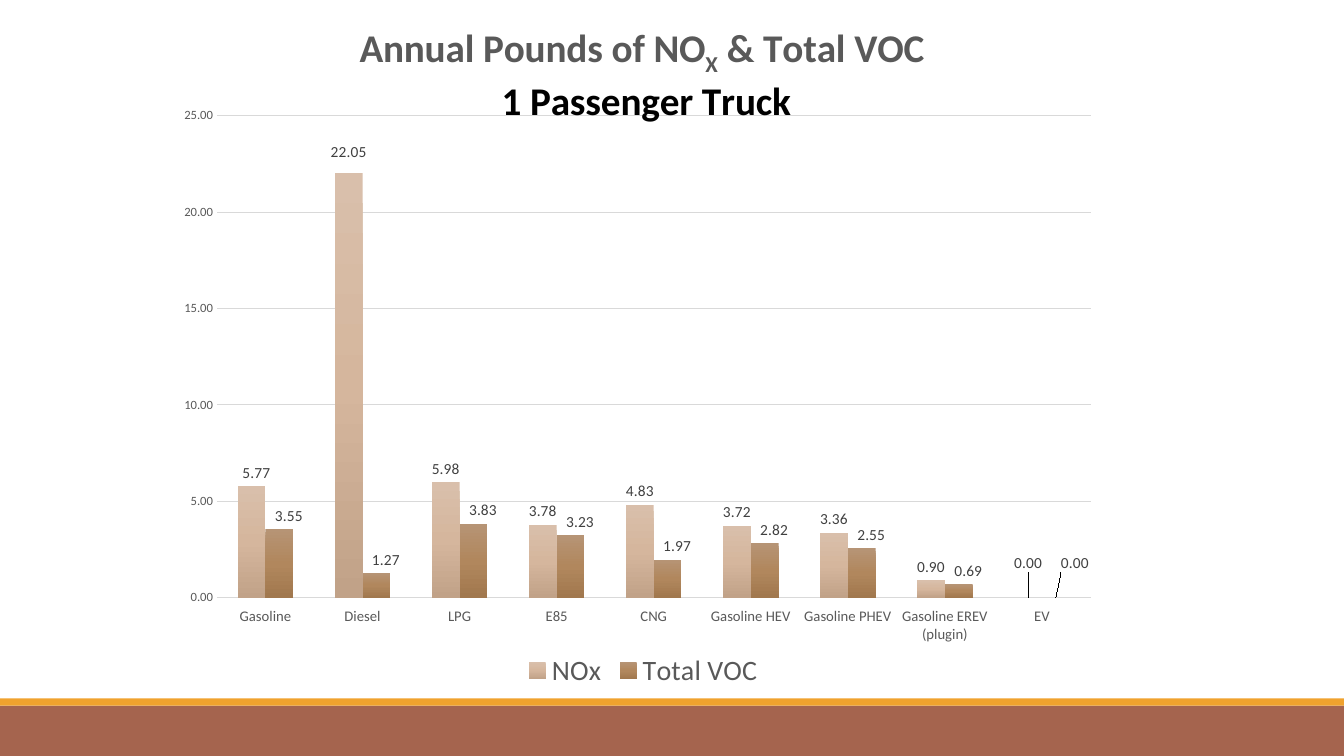
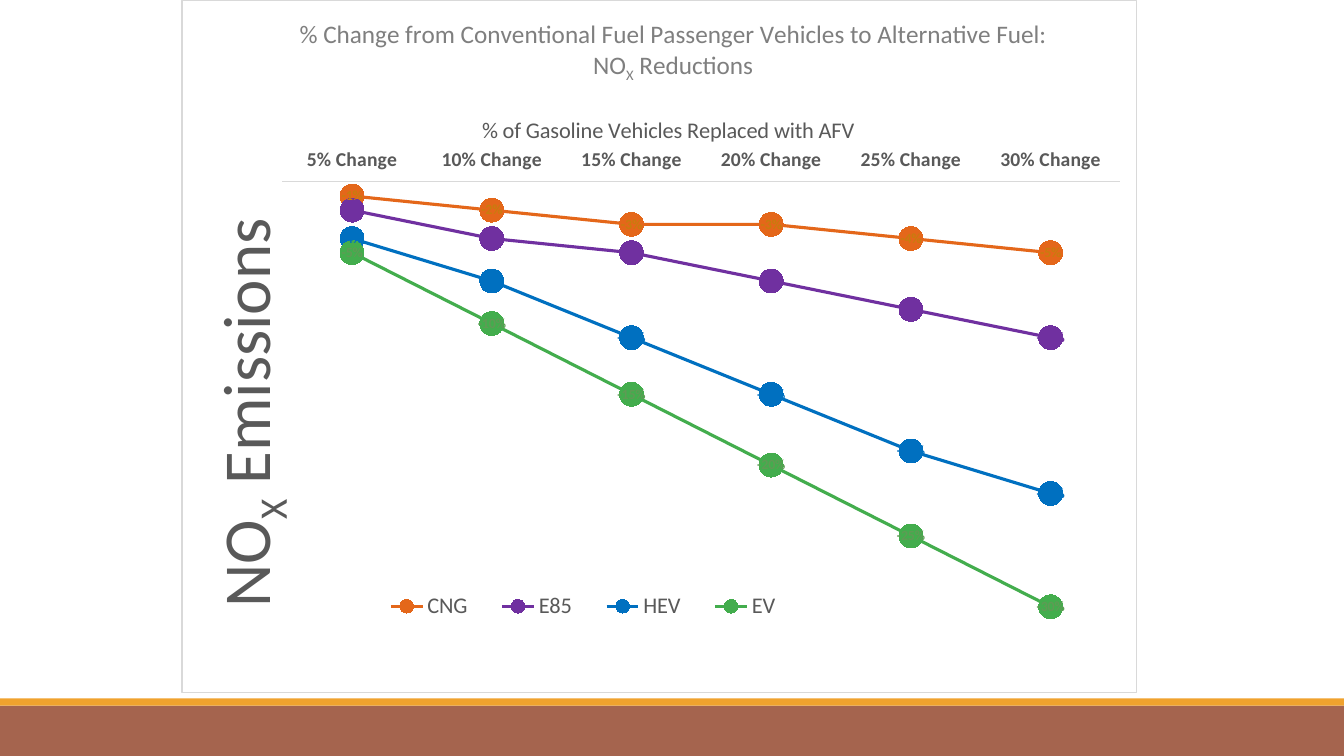
from pptx import Presentation
from pptx.chart.data import CategoryChartData
from pptx.dml.color import RGBColor
from pptx.enum.chart import (XL_CHART_TYPE, XL_LABEL_POSITION, XL_LEGEND_POSITION,
                             XL_MARKER_STYLE, XL_TICK_LABEL_POSITION, XL_TICK_MARK)
from pptx.enum.shapes import MSO_SHAPE
from pptx.enum.text import PP_ALIGN
from pptx.oxml import parse_xml
from pptx.oxml.ns import nsdecls
from pptx.util import Inches, Pt

COLUMNS = XL_CHART_TYPE.COLUMN_CLUSTERED
LINES = XL_CHART_TYPE.LINE_MARKERS
OUTSIDE = XL_LABEL_POSITION.OUTSIDE_END
CENTER = XL_LABEL_POSITION.CENTER
LEGEND_BOTTOM = XL_LEGEND_POSITION.BOTTOM
LEGEND_TOP = XL_LEGEND_POSITION.TOP
NO_TICK = XL_TICK_MARK.NONE
LABELS_LOW = XL_TICK_LABEL_POSITION.LOW
LABELS_HIGH = XL_TICK_LABEL_POSITION.HIGH
CIRCLE = XL_MARKER_STYLE.CIRCLE

WIDTH, HEIGHT = Inches(13.33), Inches(7.5)
CHART_WIDTH, CHART_HEIGHT = Inches(9.48), Inches(6.88)
FONT = "Calibri"
COLORS = {
    "black": "000000", "white": "FFFFFF", "text": "595959", "label": "404040",
    "title": "7F7F7F", "rule": "D9D9D9", "band": "A5644E", "stripe": "F0A22E",
}
BANDS = [("band", 7.0, 0.5), ("stripe", 6.93, 0.07)]  # colour, top, height

TRUCK_FUELS = ["Gasoline", "Diesel", "LPG", "E85", "CNG", "Gasoline HEV",
               "Gasoline PHEV", "Gasoline EREV (plugin)", "EV"]
# name, values, gradient colours, label shifts by point
TRUCK_SERIES = [
    ("NOx", [5.77, 22.05, 5.98, 3.78, 4.83, 3.72, 3.36, 0.9, 0],
     ["D9BFAB", "D5B69D", "C1A288"], {0: (0.005, 0), 1: (0, -0.01), 8: (0, -0.03)}),
    ("Total VOC", [3.55, 1.27, 3.83, 3.23, 1.97, 2.82, 2.55, 0.69, 0],
     ["B69475", "B1875D", "A1784E"],
     {**{point: (0.01, 0) for point in range(8)}, 8: (0.02, -0.03)}),
]
CHANGES = [f"{share}% Change" for share in range(5, 35, 5)]
# name, values, line colour, label colour
CHANGE_SERIES = [
    ("CNG", [-0.01, -0.02, -0.03, -0.03, -0.04, -0.05], "E4671A", "C87D0E"),
    ("E85", [-0.02, -0.04, -0.05, -0.07, -0.09, -0.11], "7030A0", "7030A0"),
    ("HEV", [-0.04, -0.07, -0.11, -0.15, -0.19, -0.22], "0070C0", "0070C0"),
    ("EV", [-0.05, -0.1, -0.15, -0.2, -0.25, -0.3], "43AD4D", "5F9B55"),
]


def rgb(color):
    return RGBColor.from_string(COLORS.get(color, color))


def style_font(font, size, color="text", bold=False):
    font.name, font.size, font.bold = FONT, Pt(size), bold
    font.color.rgb = rgb(color)


def add_text(paragraph, text, subscript=False, **style):
    run = paragraph.add_run()
    run.text = text
    style_font(run.font, **style)
    if subscript:
        run._r.get_or_add_rPr().set("baseline", "-25000")


def write_title(text_frame, lines, **style):
    """Write lines of runs; every second run of a line is a subscript."""
    for number, line in enumerate(lines):
        paragraph = text_frame.add_paragraph() if number else text_frame.paragraphs[0]
        paragraph.alignment = PP_ALIGN.CENTER
        for position, text in enumerate(line):
            add_text(paragraph, text, subscript=position % 2 == 1, **style)


def set_layout(parent, x, y, width=None, height=None, inner=False, edge=True):
    """Place a chart part by shares of the chart; without edge, shift it."""
    for old_layout in parent.xpath("c:layout"):
        parent.remove(old_layout)
    settings = [("layoutTarget", "inner")] if inner else []
    if edge:
        settings += [("xMode", "edge"), ("yMode", "edge")]
    settings += [("x", x), ("y", y)]
    if width:
        settings += [("w", width), ("h", height)]
    items = "".join(f'<c:{tag} val="{value}"/>' for tag, value in settings)
    layout = parse_xml(f'<c:layout {nsdecls("c")}><c:manualLayout>{items}'
                       '</c:manualLayout></c:layout>')
    before = parent.xpath("c:tx|c:legendPos|c:idx")
    if before:
        before[0].addnext(layout)
    else:
        parent.insert(0, layout)


def chart_part(chart, query):
    return chart.element.xpath(f"c:chart/{query}")[0]


def add_bands(layout, slide):
    """Draw the bottom bands and move them to the layout that the slides share."""
    for placeholder in list(layout.placeholders):
        layout.shapes.element.remove(placeholder.element)
    for color, top, height in BANDS:
        band = slide.shapes.add_shape(MSO_SHAPE.RECTANGLE, 0, Inches(top), WIDTH, Inches(height))
        band.shadow.inherit = False
        band.fill.solid()
        band.fill.fore_color.rgb = rgb(color)
        band.line.fill.background()
        layout.shapes.element.append(band.element)


def add_chart(slide, kind, left, categories, series_rows, number_format, plot_box):
    data = CategoryChartData(number_format=number_format)
    data.categories = categories
    for name, values, *_ in series_rows:
        data.add_series(name, values)
    chart = slide.shapes.add_chart(kind, Inches(left), 0, CHART_WIDTH, CHART_HEIGHT, data).chart
    style_font(chart.font, 10, "black")
    chart.plots[0].vary_by_categories = False
    set_layout(chart_part(chart, "c:plotArea"), *plot_box, inner=True)
    return chart


def add_legend(chart, position, size):
    chart.has_legend = True
    chart.legend.position = position
    chart.legend.include_in_layout = False
    style_font(chart.legend.font, size)


def style_category_axis(axis, label_position, size, width, bold=False):
    axis.major_tick_mark = axis.minor_tick_mark = NO_TICK
    axis.tick_label_position = label_position
    axis.format.line.color.rgb = rgb("rule")
    axis.format.line.width = Pt(width)
    style_font(axis.tick_labels.font, size, bold=bold)


def style_value_axis(axis, low, high, step):
    axis.minimum_scale, axis.maximum_scale, axis.major_unit = low, high, step
    axis.major_tick_mark = axis.minor_tick_mark = NO_TICK


def show_values(series, number_format, position, **style):
    labels = series.data_labels
    labels.show_value = True
    labels.number_format = number_format
    labels.number_format_is_linked = False
    labels.position = position
    style_font(labels.font, **style)


def fill_gradient(chart, series, number, colors):
    series.format.fill.gradient()
    series.format.fill.gradient_angle = 270
    gradient_stops = chart.element.xpath(".//c:ser")[number].xpath("c:spPr/a:gradFill/a:gsLst")[0]
    for stop in list(gradient_stops):
        gradient_stops.remove(stop)
    for position, color in enumerate(colors):
        gradient_stops.append(parse_xml(
            f'<a:gs {nsdecls("a")} pos="{position * 50000}"><a:srgbClr val="{color}"/></a:gs>'))


def shift_labels(chart, series, number, shifts, **style):
    for point, (x, y) in shifts.items():
        label = series.points[point].data_label
        style_font(label.font, **style)
        label.position = OUTSIDE
        element = chart.element.xpath(".//c:ser")[number].xpath(
            f"c:dLbls/c:dLbl[c:idx/@val='{point}']")[0]
        set_layout(element, x, y, edge=False)


def add_truck_chart(slide):
    chart = add_chart(slide, COLUMNS, 1.64, TRUCK_FUELS, TRUCK_SERIES, "0.00",
                      (0.054, 0.167, 0.914, 0.695))
    chart.plots[0].gap_width = 150
    title = chart.chart_title.text_frame
    write_title(title, [["Annual Pounds of NO", "X"]], size=28, bold=True)
    add_text(title.paragraphs[0], " & Total VOC ", size=28, bold=True)
    subtitle = title.add_paragraph()
    subtitle.alignment = PP_ALIGN.CENTER
    add_text(subtitle, "1 Passenger Truck", size=28, color="black", bold=True)
    set_layout(chart_part(chart, "c:title"), 0.2, 0.03)
    add_legend(chart, LEGEND_BOTTOM, 20)

    style_category_axis(chart.category_axis, LABELS_LOW, 10.5, 1)
    value_axis = chart.value_axis
    style_value_axis(value_axis, 0, 25, 5)
    value_axis.format.line.fill.background()
    value_axis.major_gridlines.format.line.color.rgb = rgb("rule")
    value_axis.major_gridlines.format.line.width = Pt(0.75)
    value_axis.tick_labels.number_format = "0.00"
    value_axis.tick_labels.number_format_is_linked = False
    style_font(value_axis.tick_labels.font, 9)

    label_style = {"size": 11, "color": "label"}
    for number, (series, row) in enumerate(zip(chart.plots[0].series, TRUCK_SERIES)):
        fill_gradient(chart, series, number, row[2])
        show_values(series, "0.00", OUTSIDE, **label_style)
        shift_labels(chart, series, number, row[3], **label_style)


def add_change_chart(slide):
    chart = add_chart(slide, LINES, 1.8, CHANGES, CHANGE_SERIES, "0%",
                      (0.105, 0.262, 0.878, 0.716))
    chart_part(chart, ".").addnext(parse_xml(
        f'<c:spPr {nsdecls("c", "a")}><a:solidFill><a:srgbClr val="{COLORS["white"]}"/>'
        f'</a:solidFill><a:ln w="{Pt(0.75)}"><a:solidFill><a:srgbClr val="{COLORS["rule"]}"/>'
        '</a:solidFill></a:ln></c:spPr>'))
    write_title(chart.chart_title.text_frame, [
        ["% Change from Conventional Fuel Passenger Vehicles to Alternative Fuel:"],
        ["NO", "X", " Reductions"]], size=18, color="title")
    # The text after the subscript returns to the baseline because it is the third run.
    set_layout(chart_part(chart, "c:title"), 0.12, 0.02)
    add_legend(chart, LEGEND_TOP, 16)
    set_layout(chart_part(chart, "c:legend"), 0.19, 0.85, 0.46, 0.05)

    style_category_axis(chart.category_axis, LABELS_HIGH, 14, 0.75, bold=True)
    write_title(chart.category_axis.axis_title.text_frame,
                [["% of Gasoline Vehicles Replaced with AFV"]], size=16)
    set_layout(chart_part(chart, "c:plotArea/c:catAx/c:title"), 0.31, 0.16)

    value_axis = chart.value_axis
    style_value_axis(value_axis, -0.35, 0, 0.05)
    value_axis.has_major_gridlines = False
    value_axis.visible = False
    write_title(value_axis.axis_title.text_frame, [["NO", "X", " Emissions"]], size=48)
    emissions_title = chart_part(chart, "c:plotArea/c:valAx/c:title")
    emissions_title.xpath(".//a:bodyPr")[0].set("rot", "-5400000")
    set_layout(emissions_title, 0.02, 0.31)

    for series, (_, _, color, label_color) in zip(chart.plots[0].series, CHANGE_SERIES):
        series.smooth = False
        series.format.line.color.rgb = rgb(color)
        series.format.line.width = Pt(2.25)
        marker = series.marker
        marker.style, marker.size = CIRCLE, 17
        marker.format.fill.solid()
        marker.format.fill.fore_color.rgb = rgb(color)
        marker.format.line.color.rgb = rgb(color)
        show_values(series, "0%", CENTER, size=10, color=label_color, bold=True)


def main():
    presentation = Presentation()
    presentation.slide_width, presentation.slide_height = WIDTH, HEIGHT
    layout = presentation.slide_layouts.get_by_name("Blank")
    truck_slide, change_slide = [presentation.slides.add_slide(layout) for _ in range(2)]
    add_bands(layout, truck_slide)
    add_truck_chart(truck_slide)
    add_change_chart(change_slide)
    presentation.save("out.pptx")


if __name__ == "__main__":
    main()
